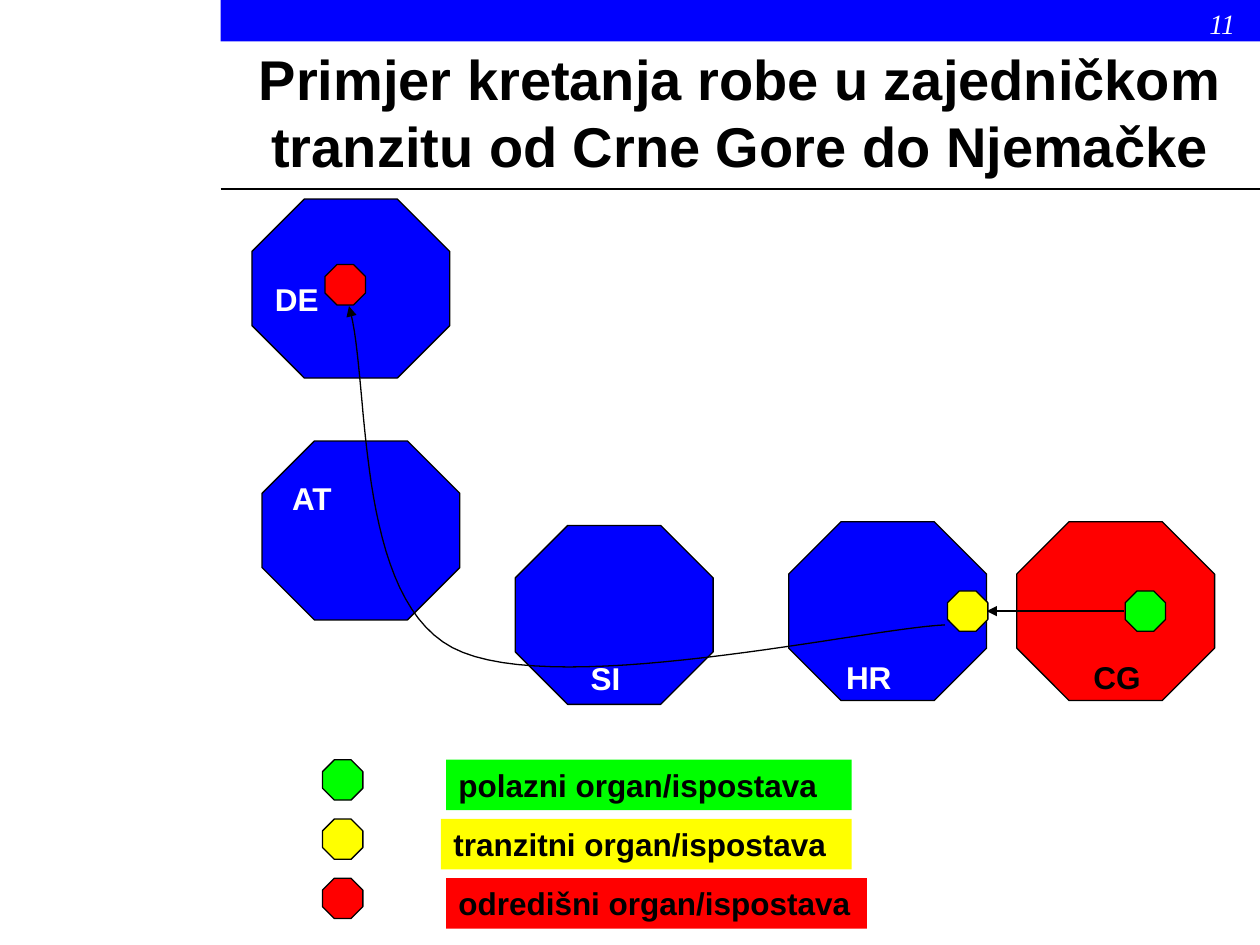
from pptx import Presentation
from pptx.dml.color import RGBColor
from pptx.enum.shapes import MSO_CONNECTOR as Connector, MSO_SHAPE as Shape
from pptx.enum.text import MSO_ANCHOR as Anchor, MSO_AUTO_SIZE as AutoSize, PP_ALIGN as Align
from pptx.oxml.ns import qn
from pptx.util import Inches, Pt
from lxml.etree import SubElement

BLUE, RED, GREEN, YELLOW = "0000FF", "FF0000", "00FF00", "FFFF00"
BLACK, WHITE = "000000", "FFFFFF"
COUNTRY_SIZE = (1.57, 1.42)
MARKER_SIZE = (0.32, 0.32)
CURVE_STEPS = 30


def colour(value):
    return RGBColor.from_string(value)


def box_lengths(*values):
    return [Inches(value) for value in values]


def add_filled(slide, kind, box, fill, outlined=True):
    shape = slide.shapes.add_shape(kind, *box_lengths(*box))
    shape.shadow.inherit = False
    shape.fill.solid()
    shape.fill.fore_color.rgb = colour(fill)
    if outlined:
        style_line(shape)
    else:
        shape.line.fill.background()
    return shape


def add_octagon(slide, left, top, size, fill):
    octagon = add_filled(slide, Shape.OCTAGON, (left, top, *size), fill)
    octagon.adjustments[0] = 0.293


def style_line(shape, arrow=False):
    shape.line.color.rgb = colour(BLACK)
    shape.line.width = Pt(0.75)
    if arrow:
        outline = shape._element.spPr.find(qn("a:ln"))
        SubElement(outline, qn("a:tailEnd"), type="triangle")


def add_line(slide, start, end, arrow=False):
    line = slide.shapes.add_connector(Connector.STRAIGHT, *box_lengths(*start, *end))
    style_line(line, arrow)
    SubElement(line._element.spPr, qn("a:effectLst"))


def write(shape, text, size=18, fill=BLACK, align=Align.LEFT, name="Arial",
          bold=True, italic=False, wrap=True):
    frame = shape.text_frame
    frame.text = text
    frame.word_wrap = wrap
    frame.auto_size = AutoSize.NONE
    frame.vertical_anchor = Anchor.TOP
    paragraph = frame.paragraphs[0]
    paragraph.alignment = align
    font = paragraph.font
    font.name, font.size, font.bold, font.italic = name, Pt(size), bold, italic
    font.color.rgb = colour(fill)


def add_label(slide, box, text, **style):
    write(slide.shapes.add_textbox(*box_lengths(*box)), text, **style)


def add_header(slide, left, width):
    # Blue band, title, rule and page number
    add_filled(slide, Shape.RECTANGLE, (left, 0, width, 0.33), BLUE, outlined=False)
    title = slide.shapes.title
    title.left, title.top, title.width, title.height = box_lengths(left, 0.3, width, 1.18)
    write(title, "Primjer kretanja robe u zajedničkom tranzitu od Crne Gore do Njemačke",
          size=32, align=Align.CENTER)
    add_line(slide, (left, 1.5), (left + width, 1.5))
    add_label(slide, (left + width - 0.5, 0, 0.5, 0.37), "11", size=16, fill=WHITE,
              name="Times New Roman", bold=False, italic=True)


def bezier(p0, p1, p2, p3):
    """Points along a cubic curve, without its start."""
    for step in range(1, CURVE_STEPS + 1):
        t = step / CURVE_STEPS
        u = 1 - t
        yield tuple(u**3 * a + 3 * u * u * t * b + 3 * u * t * t * c + t**3 * d
                    for a, b, c, d in zip(p0, p1, p2, p3))


def add_route(slide, start, *segments):
    # The builder rounds to whole units, so points are given in EMU
    builder = slide.shapes.build_freeform(*box_lengths(*start))
    for segment in segments:
        points = [box_lengths(*point) for point in bezier(start, *segment)]
        builder.add_line_segments(points, close=False)
        start = segment[-1]
    route = builder.convert_to_shape()
    route.shadow.inherit = False
    route.fill.background()
    style_line(route, arrow=True)


def add_map(slide, left, top):
    def place(x, y):
        return left + x, top + y

    # Countries: code, octagon offset, label offset, label width, fill, text colour
    countries = [
        ("DE", 0, 0, 0.08, 0.59, 0.55, BLUE, WHITE),
        ("SI", 2.09, 2.59, 0.24, 1.01, 0.95, BLUE, WHITE),
        ("CG", 6.07, 2.56, 0.32, 1.03, 0.95, RED, BLACK),
        ("AT", 0.08, 1.92, -0.08, 0.25, 0.95, BLUE, WHITE),
        ("HR", 4.26, 2.56, 0.16, 1.03, 0.95, BLUE, WHITE),
    ]
    for _, x, y, _, _, _, fill, _ in countries:
        add_octagon(slide, *place(x, y), COUNTRY_SIZE, fill)

    # Route from departure through transit to destination
    add_line(slide, place(6.92, 3.27), place(5.83, 3.27), arrow=True)
    add_route(slide, place(5.5, 3.38),
              (place(4.85, 3.41), place(2.38, 3.98), place(1.59, 3.56)),
              (place(0.8, 3.14), place(0.94, 1.41), place(0.77, 0.85)))

    # Customs offices
    for x, y, fill in [(6.93, 3.11, GREEN), (5.52, 3.11, YELLOW), (0.58, 0.52, RED)]:
        add_octagon(slide, *place(x, y), MARKER_SIZE, fill)

    for code, x, y, dx, dy, width, _, text_fill in countries:
        add_label(slide, (*place(x + dx, y + dy), width, 0.4), code,
                  fill=text_fill, align=Align.CENTER)


def add_legend(slide, left, top, row_height):
    entries = [
        ("polazni organ/ispostava", GREEN, 0.98, 3.22),
        ("tranzitni organ/ispostava", YELLOW, 0.94, 3.26),
        ("odredišni organ/ispostava", RED, 0.98, 3.34),
    ]
    for row, (text, fill, offset, width) in enumerate(entries):
        y = top + row * row_height
        add_octagon(slide, left, y, MARKER_SIZE, fill)
        caption = add_filled(slide, Shape.RECTANGLE, (left + offset, y, width, 0.4),
                             fill, outlined=False)
        write(caption, text, wrap=False)


def main():
    presentation = Presentation()
    presentation.slide_width, presentation.slide_height = box_lengths(10, 7.5)
    slide = presentation.slides.add_slide(presentation.slide_layouts[5])
    add_header(slide, 1.75, 8.25)
    add_map(slide, 2, 1.58)
    add_legend(slide, 2.56, 6.03, 0.47)
    presentation.save("out.pptx")


if __name__ == "__main__":
    main()
